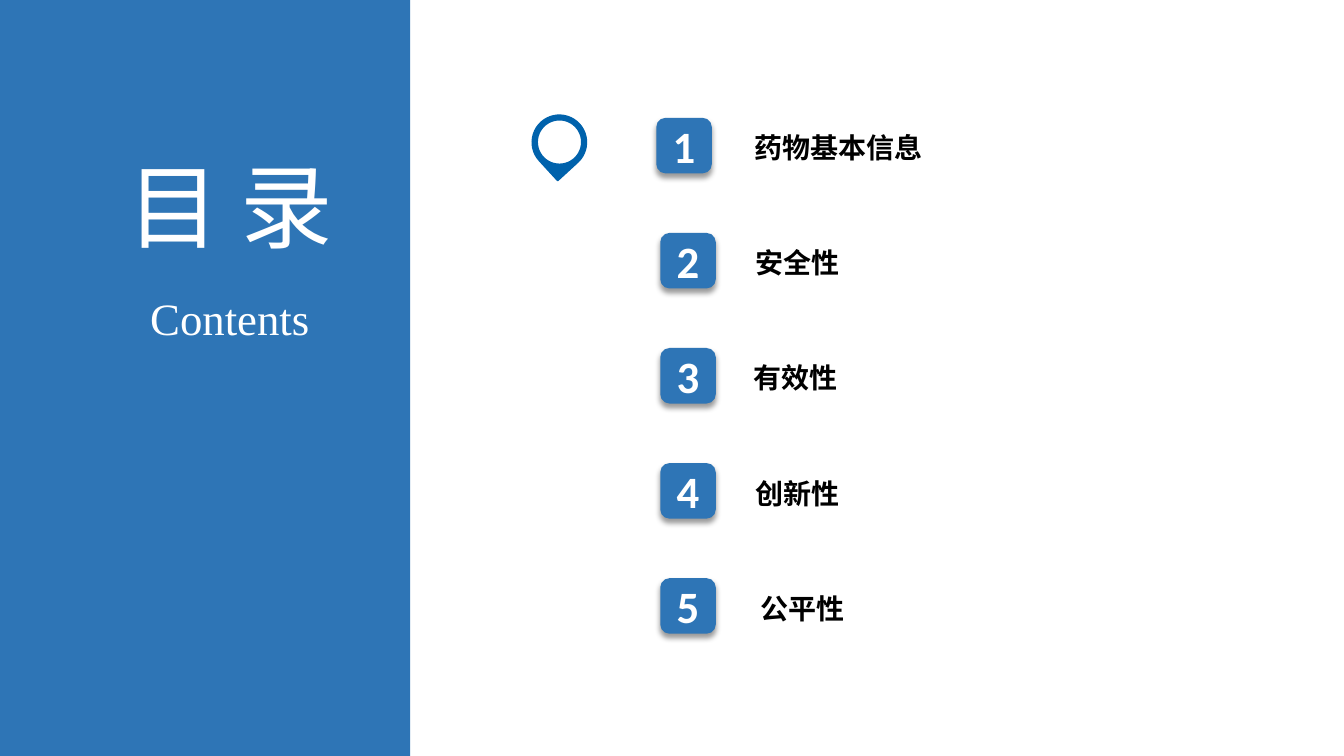
"""Build the contents slide with a coloured side panel and five numbered entries."""
import dataclasses

import lxml.etree
import pptx
import pptx.dml.color
import pptx.enum.shapes
import pptx.enum.text
import pptx.oxml
import pptx.oxml.ns
import pptx.util

Cm = pptx.util.Cm
Shape = pptx.enum.shapes.MSO_SHAPE
Align = pptx.enum.text.PP_ALIGN
Anchor = pptx.enum.text.MSO_ANCHOR

COLOURS = {"panel": "2E75B6", "pin": "0062AC", "white": "FFFFFF", "black": "000000"}
CHINESE_FONT = "Noto Sans CJK SC"
FIRST_TOP, PITCH, BADGE_SIZE = 2.97, 2.9, 1.4
LABEL_DROP, LABEL_HEIGHT = 0.2, 1.12
SHADOW = (
    f'<a:effectLst {pptx.oxml.ns.nsdecls("a")}>'
    '<a:outerShdw blurRad="50800" dist="38100" dir="5400000" algn="t" rotWithShape="0">'
    f'<a:srgbClr val="{COLOURS["black"]}"><a:alpha val="40000"/></a:srgbClr>'
    "</a:outerShdw></a:effectLst>"
)


@dataclasses.dataclass(frozen=True)
class Box:
    left: float
    top: float
    width: float
    height: float

    def lengths(self) -> tuple:
        return Cm(self.left), Cm(self.top), Cm(self.width), Cm(self.height)


@dataclasses.dataclass(frozen=True)
class Style:
    font: str
    size: int
    colour: str
    bold: bool = False
    align: Align = Align.CENTER
    anchor: Anchor = Anchor.TOP
    wrap: bool = False


@dataclasses.dataclass(frozen=True)
class Entry:
    label: str
    badge_left: float
    label_left: float
    label_width: float = 2.64


TITLE = Style(CHINESE_FONT, 66, "white")
SUBTITLE = Style("Times New Roman", 32, "white")
NUMBER = Style("Calibri", 32, "white", bold=True, anchor=Anchor.MIDDLE, wrap=True)
LABEL = Style(CHINESE_FONT, 20, "black", bold=True, align=Align.LEFT)

ENTRIES = [
    Entry("药物基本信息", 16.54, 18.77, 5.61),
    Entry("安全性", 16.64, 18.8),
    Entry("有效性", 16.64, 18.75),
    Entry("创新性", 16.64, 18.8),
    Entry("公平性", 16.64, 18.92),
]


def rgb(name: str) -> pptx.dml.color.RGBColor:
    return pptx.dml.color.RGBColor.from_string(COLOURS[name])


def write(shape, text: str, style: Style) -> None:
    frame = shape.text_frame
    frame.text = text
    frame.word_wrap = style.wrap
    frame.auto_size = pptx.enum.text.MSO_AUTO_SIZE.NONE
    frame.vertical_anchor = style.anchor
    para = frame.paragraphs[0]
    para.alignment = style.align
    span = para.runs[0]
    span.font.size = pptx.util.Pt(style.size)
    span.font.bold = style.bold
    span.font.color.rgb = rgb(style.colour)
    span.font.name = style.font
    properties = span.font._element
    east_asian = lxml.etree.SubElement(properties, pptx.oxml.ns.qn("a:ea"))
    east_asian.set("typeface", style.font)


def add_shape(page, kind: Shape, box: Box, fill: str, line: str = ""):
    shape = page.shapes.add_shape(kind, *box.lengths())
    shape.shadow.inherit = False
    shape.fill.solid()
    shape.fill.fore_color.rgb = rgb(fill)
    if line:
        shape.line.color.rgb = rgb(line)
        shape.line.width = pptx.util.Pt(1)
    else:
        shape.line.fill.background()
    return shape


def add_text(page, box: Box, text: str, style: Style) -> None:
    write(page.shapes.add_textbox(*box.lengths()), text, style)


def add_side_panel(page) -> None:
    panel = add_shape(page, Shape.RECTANGLE, Box(0, 0, 10.34, 19.05), "panel")
    title = page.shapes.title
    title.element.addprevious(panel.element)
    title.left, title.top, title.width, title.height = Box(2.59, 3.63, 6.4, 3.07).lengths()
    write(title, "目 录", TITLE)
    add_text(page, Box(3.51, 7.21, 4.57, 1.63), "Contents", SUBTITLE)


def add_pin(page) -> None:
    drop = add_shape(page, Shape.TEAR, Box(13.41, 2.9, 1.37, 1.37), "pin", "pin")
    drop.rotation = 137.5
    add_shape(page, Shape.OVAL, Box(13.54, 3.02, 1.12, 1.12), "white", "pin")


def add_entry(page, number: int, entry: Entry) -> None:
    top = FIRST_TOP + (number - 1) * PITCH
    badge_box = Box(entry.badge_left, top, BADGE_SIZE, BADGE_SIZE)
    badge = add_shape(page, Shape.ROUNDED_RECTANGLE, badge_box, "panel")
    properties = badge.element.spPr
    plain_effects = properties.find(pptx.oxml.ns.qn("a:effectLst"))
    properties.replace(plain_effects, pptx.oxml.parse_xml(SHADOW))
    write(badge, str(number), NUMBER)
    label_box = Box(entry.label_left, top + LABEL_DROP, entry.label_width, LABEL_HEIGHT)
    add_text(page, label_box, entry.label, LABEL)


def main() -> None:
    deck = pptx.Presentation()
    deck.slide_width, deck.slide_height = Cm(33.87), Cm(19.05)
    page = deck.slides.add_slide(deck.slide_layouts.get_by_name("Title Only"))
    add_side_panel(page)
    add_pin(page)
    for number, entry in enumerate(ENTRIES, start=1):
        add_entry(page, number, entry)
    deck.save("out.pptx")


if __name__ == "__main__":
    main()
